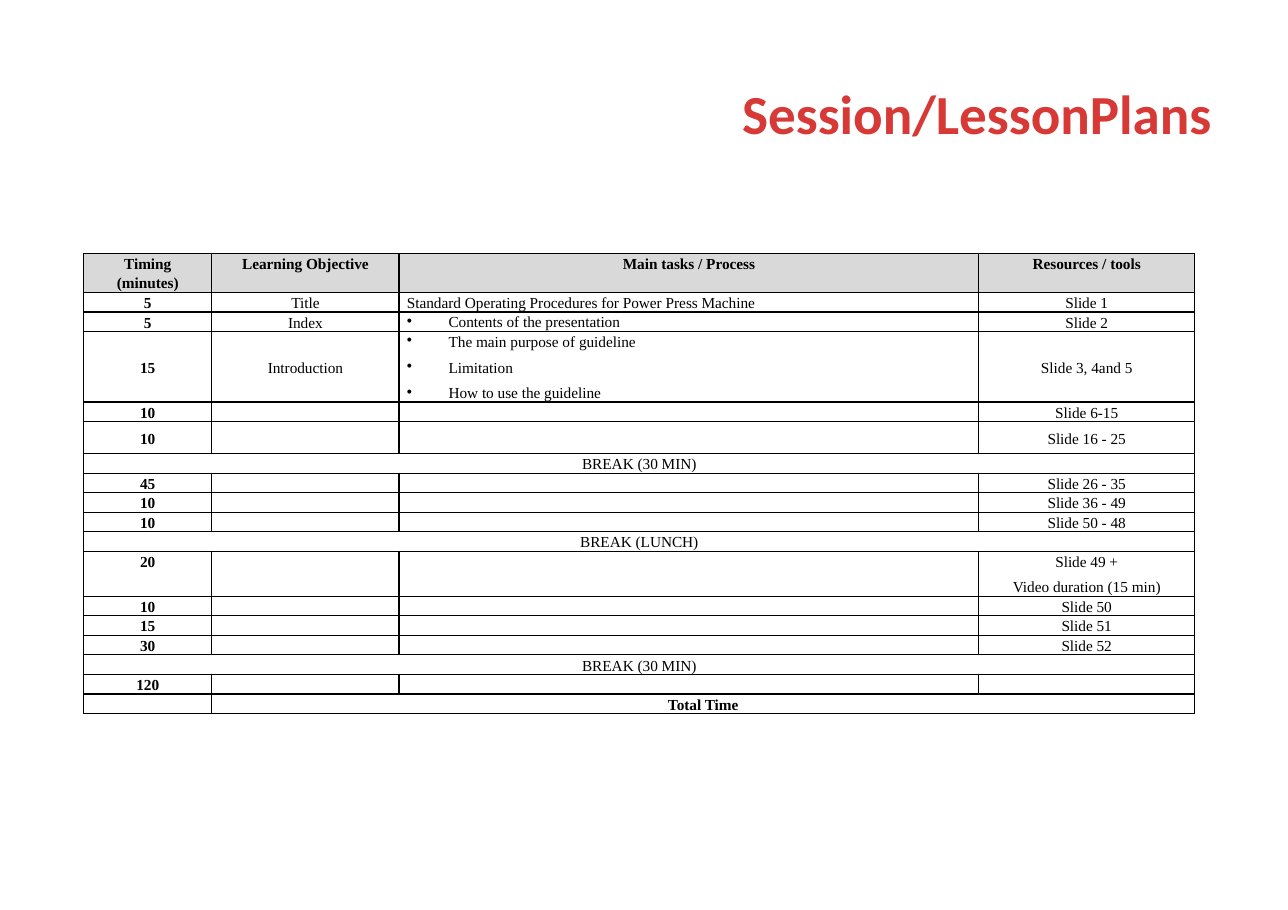
from dataclasses import dataclass

from lxml import etree
from pptx import Presentation
from pptx.dml.color import RGBColor
from pptx.enum.text import MSO_ANCHOR, MSO_AUTO_SIZE, PP_ALIGN
from pptx.oxml.ns import qn
from pptx.util import Cm, Pt

TOP, MIDDLE = MSO_ANCHOR.TOP, MSO_ANCHOR.MIDDLE
LEFT, CENTER, RIGHT = PP_ALIGN.LEFT, PP_ALIGN.CENTER, PP_ALIGN.RIGHT
NO_AUTOFIT = MSO_AUTO_SIZE.NONE
TITLE_ONLY = 5


@dataclass(frozen=True)
class Theme:
    title_font: str = "Calibri"
    table_font: str = "Times New Roman"
    title_size: int = 36
    table_size: int = 10
    title_color: str = "D73A36"
    ink: str = "000000"
    header_fill: str = "D9D9D9"


# Row heights in centimetres
SINGLE, SPACED, DOUBLE, TWO_ITEMS, THREE_ITEMS = 0.45, 0.74, 0.9, 1.03, 1.63

COLUMN_WIDTHS = (2.95, 4.32, 13.36, 4.98)
HEADERS = ("Timing (minutes)", "Learning Objective", "Main tasks / Process", "Resources / tools")

# Height, then timing, objective, tasks (a tuple is a bulleted list), resources.
# A row with a single text is a break across the whole table.
SESSIONS = [
    (SINGLE, "5", "Title", "Standard Operating Procedures for Power Press Machine", "Slide 1"),
    (SINGLE, "5", "Index", ("Contents of the presentation",), "Slide 2"),
    (THREE_ITEMS, "15", "Introduction",
     ("The main purpose of guideline", "Limitation", "How to use the guideline"),
     "Slide 3, 4and 5"),
    (SINGLE, "10", "", "", "Slide 6-15"),
    (SPACED, "10", "", "", "Slide 16 - 25"),
    (SINGLE, "BREAK (30 MIN)"),
    (SINGLE, "45", "", "", "Slide 26 - 35"),
    (SINGLE, "10", "", "", "Slide 36 - 49"),
    (SINGLE, "10", "", "", "Slide 50 - 48"),
    (SINGLE, "BREAK (LUNCH)"),
    (TWO_ITEMS, "20", "", "", "Slide 49 +\nVideo duration (15 min)"),
    (SINGLE, "10", "", "", "Slide 50"),
    (SINGLE, "15", "", "", "Slide 51"),
    (SINGLE, "30", "", "", "Slide 52"),
    (SINGLE, "BREAK (30 MIN)"),
    (SINGLE, "120", "", "", ""),
]


class SlideBuilder:
    def __init__(self, presentation, theme):
        self.theme = theme
        self.slide = presentation.slides.add_slide(presentation.slide_layouts[TITLE_ONLY])

    def title(self, text, left, top, width, height):
        shape = self.slide.shapes.title
        shape.left, shape.top, shape.width, shape.height = map(Cm, (left, top, width, height))
        frame = shape.text_frame
        frame.text = text
        frame.word_wrap = True
        frame.auto_size = NO_AUTOFIT
        frame.vertical_anchor = MIDDLE
        frame.margin_left = frame.margin_right = Cm(0.28)
        frame.margin_top = frame.margin_bottom = Cm(0.15)
        paragraph = frame.paragraphs[0]
        paragraph.alignment = RIGHT
        self.font(paragraph, self.theme.title_font, self.theme.title_size,
                  self.theme.title_color, True)

    def font(self, paragraph, name, size, color, bold):
        font = paragraph.font
        font.name, font.size, font.bold = name, Pt(size), bold
        font.color.rgb = RGBColor.from_string(color)

    def table(self, left, top, widths, heights):
        frame = self.slide.shapes.add_table(
            len(heights), len(widths), Cm(left), Cm(top), Cm(sum(widths)), Cm(sum(heights)))
        table = frame.table
        table.first_row = table.horz_banding = False
        for column, width in zip(table.columns, widths):
            column.width = Cm(width)
        for row, height in zip(table.rows, heights):
            row.height = Cm(height)
            for cell in row.cells:
                self.cell(cell)
        return table

    def cell(self, cell, content="", bold=False, align=CENTER, anchor=MIDDLE, fill=None):
        cell.margin_left = cell.margin_right = Cm(0.18)
        cell.margin_top = cell.margin_bottom = 0
        cell.vertical_anchor = anchor
        self.borders(cell)
        if fill:
            cell.fill.solid()
            cell.fill.fore_color.rgb = RGBColor.from_string(fill)
        else:
            cell.fill.background()
        bulleted = isinstance(content, tuple)
        cell.text_frame.text = "\n".join(content) if bulleted else content
        for index, paragraph in enumerate(cell.text_frame.paragraphs):
            paragraph.alignment = align
            paragraph.line_spacing = 1.15
            paragraph.space_before = Pt(2 if index else 0)
            paragraph.space_after = Pt(2)
            if bulleted:
                self.bullet(paragraph)
            self.font(paragraph, self.theme.table_font, self.theme.table_size,
                      self.theme.ink, bold)
            if not paragraph.text:
                self.empty_line_size(paragraph)

    def empty_line_size(self, paragraph):
        element = paragraph._p
        for mark in element.findall(qn("a:endParaRPr")):
            element.remove(mark)
        etree.SubElement(element, qn("a:endParaRPr"), sz=str(self.theme.table_size * 100))

    def bullet(self, paragraph):
        properties = paragraph._p.get_or_add_pPr()
        properties.set("marL", str(Cm(0.96)))
        properties.set("indent", str(-Cm(0.96)))
        etree.SubElement(properties, qn("a:buChar"), char="•")

    def borders(self, cell):
        properties = cell._tc.get_or_add_tcPr()
        for child in list(properties):
            properties.remove(child)
        for side in ("lnL", "lnR", "lnT", "lnB"):
            line = etree.SubElement(properties, qn(f"a:{side}"), w=str(Pt(1)))
            fill = etree.SubElement(line, qn("a:solidFill"))
            etree.SubElement(fill, qn("a:srgbClr"), val=self.theme.ink)


def main():
    presentation = Presentation()
    presentation.slide_width, presentation.slide_height = Cm(29.69), Cm(20.98)
    theme = Theme()
    builder = SlideBuilder(presentation, theme)
    builder.title("Session/LessonPlans", 6.91, 0.84, 21.31, 3.51)

    # Table grid: header, sessions, total
    heights = [DOUBLE, *(session[0] for session in SESSIONS), SINGLE]
    table = builder.table(1.93, 5.84, COLUMN_WIDTHS, heights)
    last_column = len(COLUMN_WIDTHS) - 1

    # Header row
    for column, header in enumerate(HEADERS):
        builder.cell(table.cell(0, column), header, bold=True, anchor=TOP,
                     fill=theme.header_fill)

    # Sessions and breaks
    for row, (height, *texts) in enumerate(SESSIONS, start=1):
        if len(texts) == 1:
            table.cell(row, 0).merge(table.cell(row, last_column))
            builder.cell(table.cell(row, 0), texts[0])
            continue
        timing, objective, tasks, resources = texts
        timing_anchor = TOP if height == TWO_ITEMS else MIDDLE
        builder.cell(table.cell(row, 0), timing, bold=True, anchor=timing_anchor)
        builder.cell(table.cell(row, 1), objective)
        builder.cell(table.cell(row, 2), tasks, align=LEFT, anchor=TOP)
        builder.cell(table.cell(row, 3), resources)

    # Total row
    total_row = len(heights) - 1
    table.cell(total_row, 1).merge(table.cell(total_row, last_column))
    builder.cell(table.cell(total_row, 1), "Total Time", bold=True)

    presentation.save("out.pptx")


if __name__ == "__main__":
    main()
